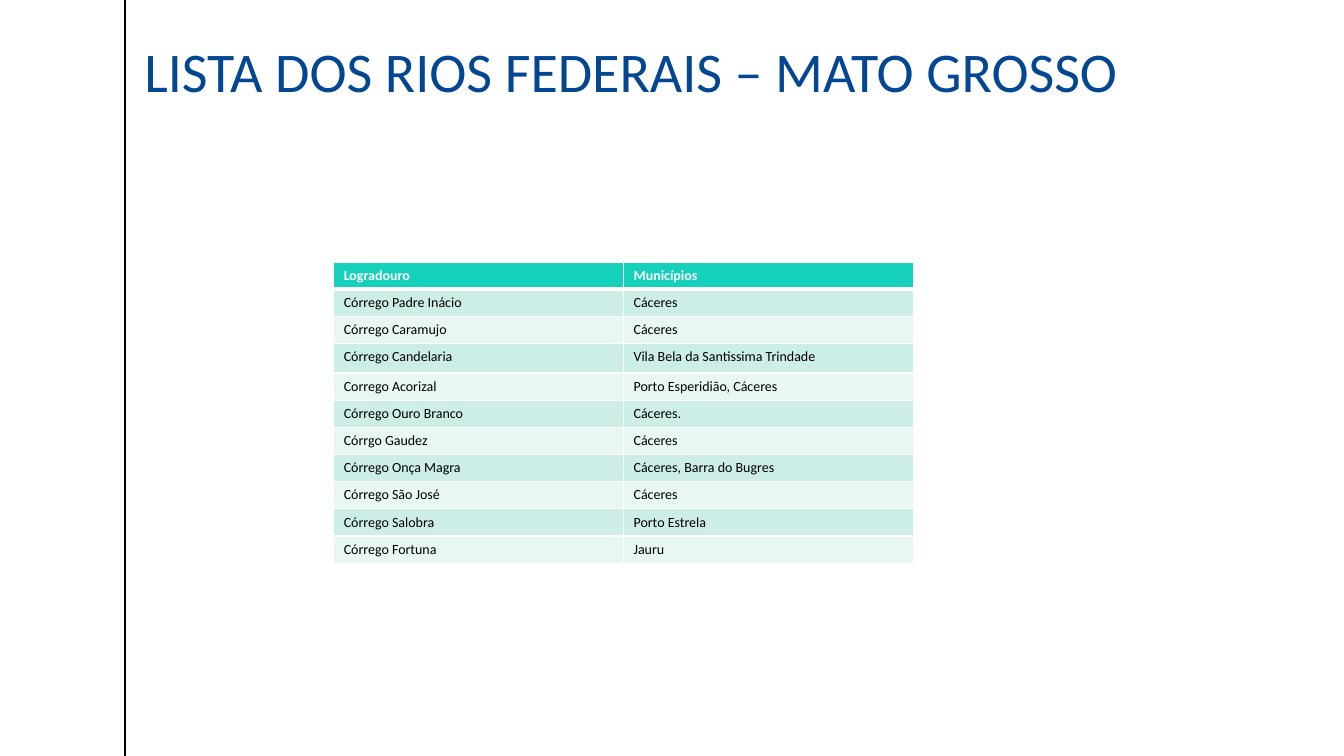
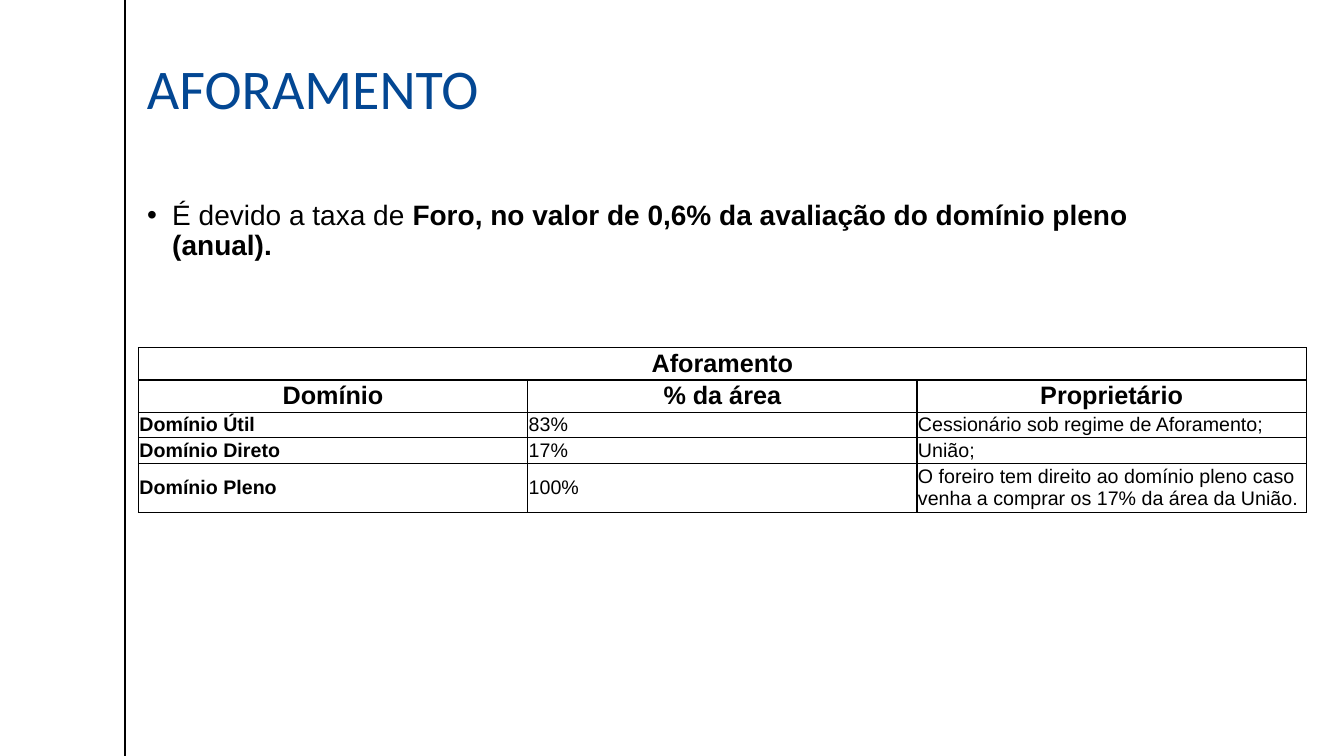
from lxml import etree
from pptx import Presentation
from pptx import util as u
from pptx.dml.color import RGBColor
from pptx.enum import shapes, text
from pptx.oxml import ns

BLACK, WHITE, NAVY = "000000", "FFFFFF", "034793"
TEAL, MINT, PALE = "15D1BB", "CCEEE7", "E8F7F3"
ink = RGBColor.from_string

prs = Presentation()
prs.slide_width, prs.slide_height = u.Inches(13.33), u.Inches(7.5)


def share(left, top, width, height):
    across, down = prs.slide_width / 100, prs.slide_height / 100
    return [round(n * unit) for n, unit in zip((left, top, width, height), (across, down) * 2)]


def write(paragraph, runs, face, size, colour):
    for words, bold in runs:
        run = paragraph.add_run()
        run.text = words
        for key, value in {"name": face, "size": u.Pt(size), "bold": bold}.items():
            setattr(run.font, key, value)
        run.font.color.rgb = ink(colour)


rivers = [
    ("Logradouro", "Municípios"),
    ("Córrego Padre Inácio", "Cáceres"),
    ("Córrego Caramujo", "Cáceres"),
    ("Córrego Candelaria", "Vila Bela da Santissima Trindade"),
    ("Corrego Acorizal", "Porto Esperidião, Cáceres"),
    ("Córrego Ouro Branco", "Cáceres."),
    ("Córrgo Gaudez", "Cáceres"),
    ("Córrego Onça Magra", "Cáceres, Barra do Bugres"),
    ("Córrego São José", "Cáceres"),
    ("Córrego Salobra", "Porto Estrela"),
    ("Córrego Fortuna", "Jauru"),
]
tenure = [
    ("Aforamento", "", ""),
    ("Domínio", "% da área", "Proprietário"),
    ("Domínio Útil", "83%", "Cessionário sob regime de Aforamento;"),
    ("Domínio Direto", "17%", "União;"),
    ("Domínio Pleno", "100%",
     "O foreiro tem direito ao domínio pleno caso venha a comprar os 17% da área da União."),
]
foro = [
    ("É devido a taxa de ", False),
    ("Foro, no valor de 0,6% da avaliação do domínio pleno (anual).", True),
]

pages = [
    {
        "title": "LISTA DOS RIOS FEDERAIS – MATO GROSSO", "title_at": (10, 0.13, 86.25, 19.33),
        "bullet": None, "rows": rivers, "table_at": (24.83, 34.67, 43.13, 40),
        "heights": [3.6] * 3 + [3.87] + [3.6] * 7, "headers": 1, "face": "Calibri",
        "sizes": (10, 10), "header_ink": WHITE, "fills": (TEAL, MINT, PALE),
        "border": WHITE, "header_rule": 3, "inset": None,
    },
    {
        "title": "AFORAMENTO", "title_at": (10.2, 4.67, 84.5, 14.8),
        "bullet": foro, "rows": tenure, "table_at": (10.3, 46, 86.9, 20.5),
        "heights": [4, 4, 3.2, 3.2, 6.1], "headers": 2, "face": "Arial",
        "sizes": (18, 14), "header_ink": BLACK, "fills": None,
        "border": BLACK, "header_rule": 1, "inset": u.Inches(0.01),
    },
]

for page in pages:
    slide = prs.slides.add_slide(prs.slide_layouts[6])

    left, top, _, height = share(9.3, 0, 0, 100)
    margin = slide.shapes.add_connector(
        shapes.MSO_CONNECTOR.STRAIGHT, left, top, left, height)
    margin.line.color.rgb = ink(BLACK)
    margin.line.width = u.Pt(1)
    etree.SubElement(margin._element.spPr, ns.qn("a:effectLst"))

    title = slide.shapes.add_textbox(*share(*page["title_at"])).text_frame
    title.word_wrap = True
    title.vertical_anchor = text.MSO_ANCHOR.MIDDLE
    title.paragraphs[0].line_spacing = 0.9
    write(title.paragraphs[0], [(page["title"], False)], "Calibri", 40, NAVY)

    if page["bullet"]:
        body = slide.shapes.add_textbox(*share(10.2, 26, 79.5, 18)).text_frame
        body.word_wrap = True
        fee = body.paragraphs[0]
        fee.line_spacing = 0.9
        layout = fee._p.get_or_add_pPr()
        layout.set("marL", str(u.Inches(0.25)))
        layout.set("indent", str(-u.Inches(0.25)))
        etree.SubElement(layout, ns.qn("a:buFont"), typeface="Arial")
        etree.SubElement(layout, ns.qn("a:buChar"), char="•")
        write(fee, page["bullet"], "Arial", 20, BLACK)

    rows, headers = page["rows"], page["headers"]
    grid = slide.shapes.add_table(len(rows), len(rows[0]), *share(*page["table_at"])).table
    for r, entries in enumerate(rows):
        grid.rows[r].height = share(0, 0, 0, page["heights"][r])[3]
        heading = r < headers
        for c, words in enumerate(entries):
            cell = grid.cell(r, c)
            edges = {"lnL": 1, "lnR": 1,
                     "lnT": page["header_rule"] if r == headers else 1,
                     "lnB": page["header_rule"] if r == headers - 1 else 1}
            for edge, points in edges.items():
                rule = etree.SubElement(
                    cell._tc.get_or_add_tcPr(), ns.qn("a:" + edge), w=str(u.Pt(points)))
                solid = etree.SubElement(rule, ns.qn("a:solidFill"))
                etree.SubElement(solid, ns.qn("a:srgbClr"), val=page["border"])
            if page["fills"]:
                cell.fill.solid()
                cell.fill.fore_color.rgb = ink(page["fills"][0 if heading else 2 - r % 2])
            else:
                cell.fill.background()
            if page["inset"]:
                for side in ("left", "top", "right", "bottom"):
                    setattr(cell, "margin_" + side, page["inset"])
                cell.vertical_anchor = text.MSO_ANCHOR.MIDDLE
                if heading:
                    cell.text_frame.paragraphs[0].alignment = text.PP_ALIGN.CENTER
            if words:
                bold = heading or (headers == 2 and c == 0)
                write(cell.text_frame.paragraphs[0], [(words, bold)], page["face"],
                      page["sizes"][0 if heading else 1],
                      page["header_ink"] if heading else BLACK)
    if headers == 2:
        grid.cell(0, 0).merge(grid.cell(0, len(rows[0]) - 1))

prs.save("out.pptx")
